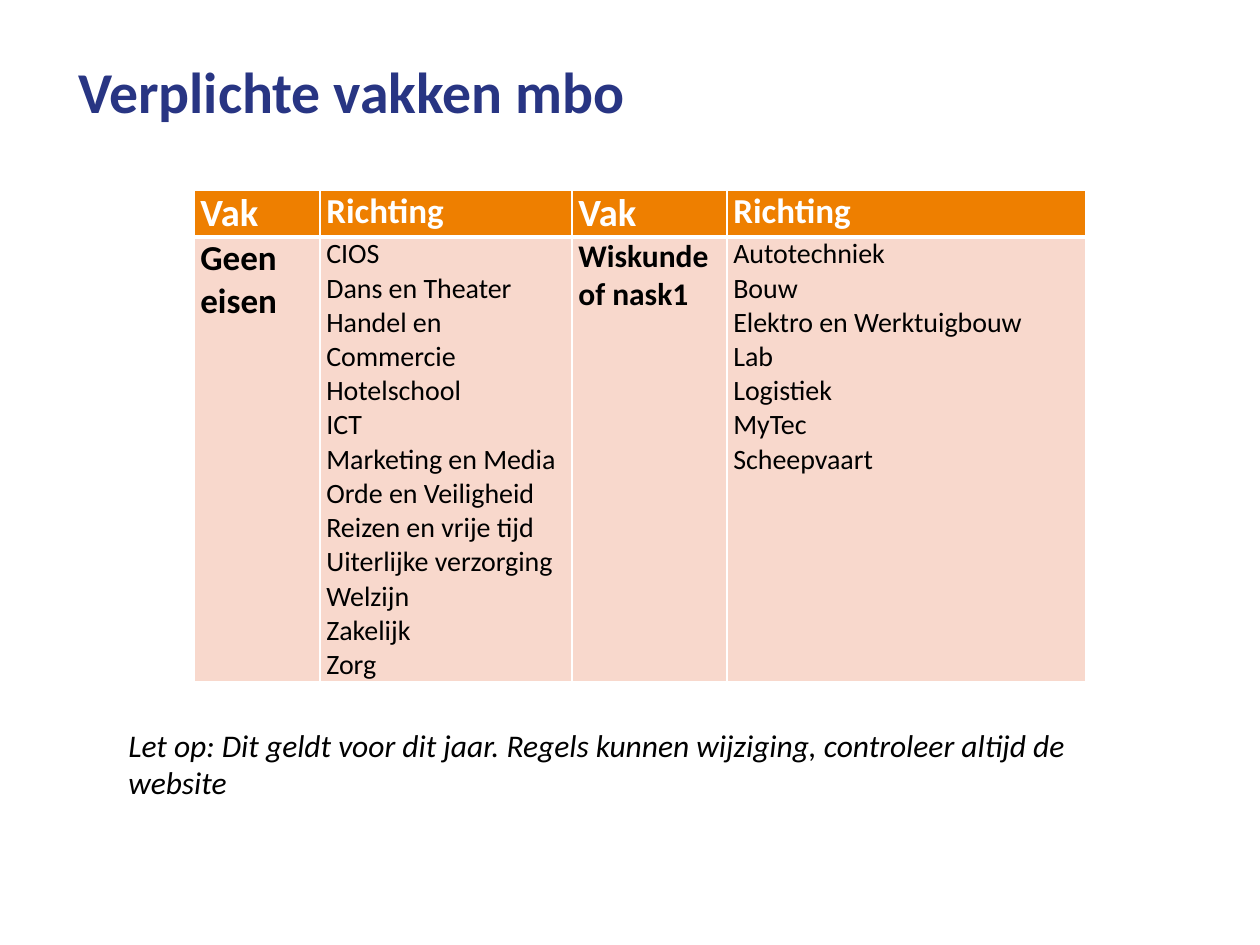
from lxml.etree import SubElement
from pptx import Presentation
from pptx.dml.color import RGBColor
from pptx.enum.text import MSO_ANCHOR, PP_ALIGN
from pptx.oxml.ns import qn
from pptx.util import Inches, Pt

FONT = "Calibri"
WHITE, BLACK, NAVY = "FFFFFF", "000000", "283583"
ORANGE, PINK = "EE7F00", "F8D8CC"


def style(tf, size, color, bold=False, italic=False):
    for p in tf.paragraphs:
        p.alignment = PP_ALIGN.LEFT
        for r in p.runs:
            r.font.name, r.font.size = FONT, Pt(size)
            r.font.bold, r.font.italic = bold, italic
            r.font.color.rgb = RGBColor.from_string(color)


def add_borders(cell, widths):
    """Draw white cell borders; widths maps a side (L, R, T, B) to points."""
    tc_pr = cell._tc.get_or_add_tcPr()
    for i, (side, width) in enumerate(widths.items()):
        ln = SubElement(tc_pr, qn(f"a:ln{side}"), w=str(Pt(width)))
        fill = SubElement(ln, qn("a:solidFill"))
        SubElement(fill, qn("a:srgbClr"), val=WHITE)
        tc_pr.insert(i, ln)


prs = Presentation()
prs.slide_width, prs.slide_height = Inches(10), Inches(7.5)
s = prs.slides.add_slide(prs.slide_layouts[5])

# Title
title = s.shapes.title
title.left, title.top = Inches(0.52), Inches(0.13)
title.width, title.height = Inches(9), Inches(1.25)
tf = title.text_frame
tf.text = "Verplichte vakken mbo"
tf.vertical_anchor = MSO_ANCHOR.MIDDLE
tf.paragraphs[0].line_spacing = 0.9
style(tf, 33, NAVY, bold=True)

# Subjects and the directions that go with them
col_widths = [1, 2, 1.23, 2.85]
row_heights = [0.37, 3.53]
header = ["Vak", "Richting", "Vak", "Richting"]
body = [
    "Geen eisen",
    "CIOS\nDans en Theater\nHandel en Commercie\nHotelschool\nICT\n"
    "Marketing en Media\nOrde en Veiligheid\nReizen en vrije tijd\n"
    "Uiterlijke verzorging\nWelzijn\nZakelijk\nZorg",
    "Wiskunde of nask1",
    "Autotechniek\nBouw\nElektro en Werktuigbouw\nLab\nLogistiek\nMyTec\nScheepvaart",
]
rows = [
    (header, [22, 20, 22, 20], WHITE, ORANGE, {"L": 1, "R": 1, "T": 1, "B": 3}),
    (body, [20, 16, 18, 16], BLACK, PINK, {"L": 1, "R": 1, "T": 3, "B": 1}),
]
table = s.shapes.add_table(
    len(rows), len(col_widths), Inches(1.54), Inches(1.51),
    Inches(sum(col_widths)), Inches(sum(row_heights))).table
for col, width in zip(table.columns, col_widths):
    col.width = Inches(width)
for row, height in zip(table.rows, row_heights):
    row.height = Inches(height)

for i, (texts, sizes, color, fill, widths) in enumerate(rows):
    for j, (text, size) in enumerate(zip(texts, sizes)):
        cell = table.cell(i, j)
        cell.margin_left = cell.margin_right = Inches(0.05)
        cell.margin_top = cell.margin_bottom = 0
        cell.fill.solid()
        cell.fill.fore_color.rgb = RGBColor.from_string(fill)
        add_borders(cell, widths)
        cell.text_frame.text = text
        style(cell.text_frame, size, color, bold=i == 0 or j % 2 == 0)

# Note under the table
note = s.shapes.add_textbox(Inches(0.92), Inches(5.71), Inches(8.15), Inches(0.71))
tf = note.text_frame
tf.word_wrap = True
tf.text = ("Let op: Dit geldt voor dit jaar. Regels kunnen wijziging, "
           "controleer altijd de website")
style(tf, 18, BLACK, italic=True)

prs.save("out.pptx")
